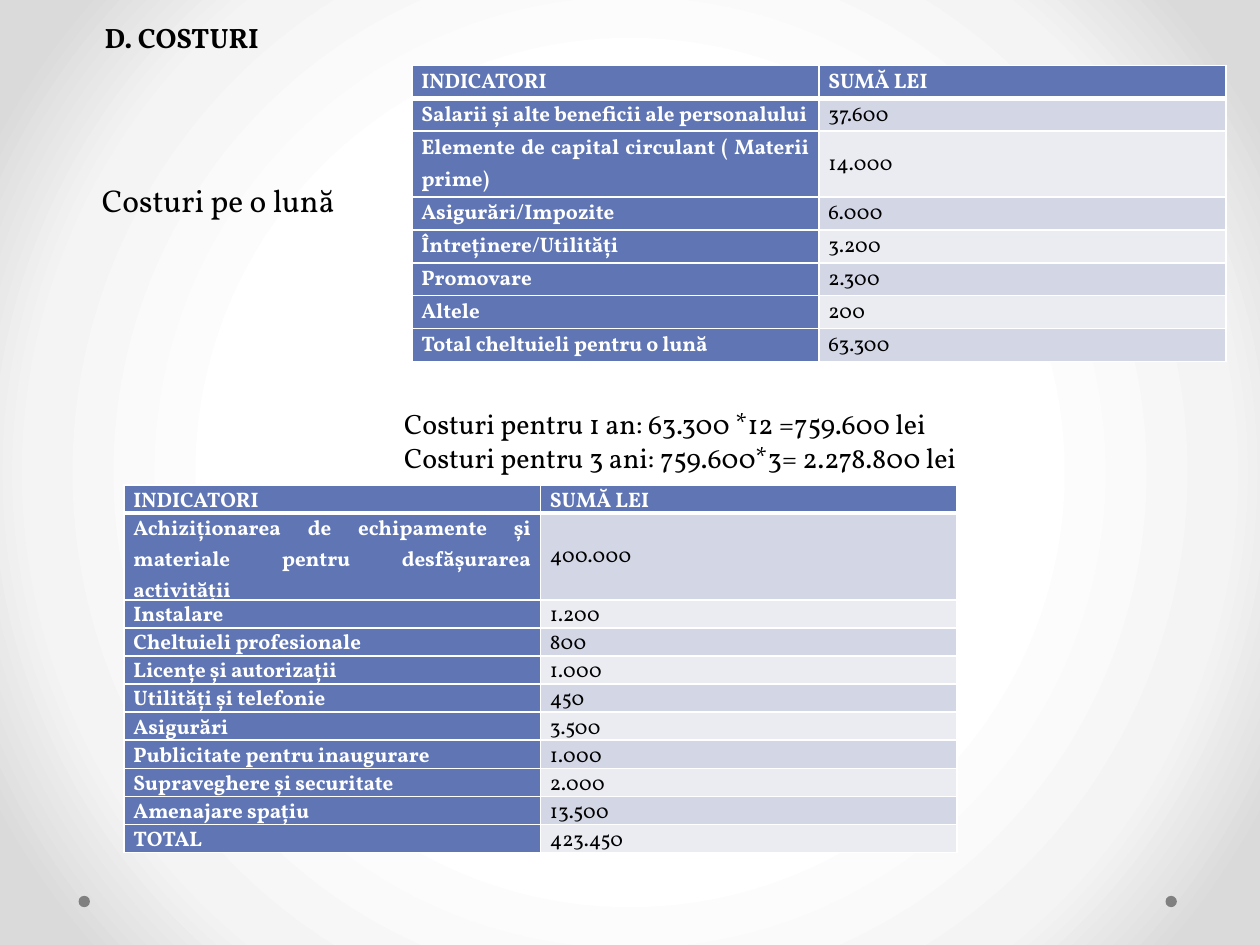
from pptx import Presentation
from pptx.dml.color import RGBColor
from pptx.enum.text import MSO_ANCHOR as ANCHOR, MSO_AUTO_SIZE as AUTO, PP_ALIGN as ALIGN
from pptx.enum.shapes import MSO_SHAPE as SHAPE
from pptx.oxml.ns import qn
from pptx.util import Pt
from lxml.etree import SubElement

FONT = "Vollkorn"
COLORS = {"text": "000000", "white": "FFFFFF", "head": "6076B4",
          "odd": "D2D6E5", "even": "EAECF2", "dot": "808080"}
BACKGROUND = [(50, "FFFFFF"), (76, "F4F4F4"), (92, "DADADA")]

TITLE = "D. COSTURI"
SUBTITLE = "Costuri pe o lună"
TOTALS = ["Costuri pentru 1 an: 63.300 *12 =759.600 lei",
          "Costuri pentru 3 ani: 759.600*3= 2.278.800 lei"]
HEADER = ("INDICATORI", "SUMĂ LEI")
MONTHLY = [
    HEADER,
    ("Salarii și alte beneficii ale personalului", "37.600"),
    ("Elemente de capital circulant ( Materii prime)", "14.000"),
    ("Asigurări/Impozite", "6.000"),
    ("Întreținere/Utilități", "3.200"),
    ("Promovare", "2.300"),
    ("Altele", "200"),
    ("Total cheltuieli pentru o lună", "63.300"),
]
STARTUP = [
    HEADER,
    ("Achiziționarea de echipamente și materiale pentru desfășurarea activității", "400.000"),
    ("Instalare", "1.200"),
    ("Cheltuieli profesionale", "800"),
    ("Licențe și autorizații", "1.000"),
    ("Utilități și telefonie", "450"),
    ("Asigurări", "3.500"),
    ("Publicitate pentru inaugurare", "1.000"),
    ("Supraveghere și securitate", "2.000"),
    ("Amenajare spațiu", "13.500"),
    ("TOTAL", "423.450"),
]


def rgb(name):
    return RGBColor.from_string(COLORS[name])


def style(p, size, color="text", bold=False):
    for r in p.runs:
        r.font.name = FONT
        r.font.size = Pt(size)
        r.font.bold = bold
        r.font.color.rgb = rgb(color)


def set_text(sp, lines, size, bold=False, wrap=False):
    tf = sp.text_frame
    tf.text = "\n".join(lines)
    tf.word_wrap = wrap
    tf.auto_size = AUTO.SHAPE_TO_FIT_TEXT
    tf.vertical_anchor = ANCHOR.TOP
    for p in tf.paragraphs:
        p.alignment = ALIGN.LEFT
        style(p, size, bold=bold)


def set_borders(cell, top, bottom):
    tcPr = cell._tc.get_or_add_tcPr()
    for side, width in (("L", 1), ("R", 1), ("T", top), ("B", bottom)):
        ln = SubElement(tcPr, qn(f"a:ln{side}"), w=str(Pt(width)))
        fill = SubElement(ln, qn("a:solidFill"))
        SubElement(fill, qn("a:srgbClr"), val=COLORS["white"])


def add_cost_table(s, rows, left, top, col_width, heights, header_anchor):
    table = s.shapes.add_table(len(rows), 2, Pt(left), Pt(top),
                               Pt(2 * col_width), Pt(sum(heights))).table
    for col in table.columns:
        col.width = Pt(col_width)
    for i, values in enumerate(rows):
        table.rows[i].height = Pt(heights[i])
        for j, value in enumerate(values):
            cell = table.cell(i, j)
            strong = i == 0 or j == 0
            cell.text_frame.text = value
            cell.margin_left = cell.margin_right = Pt(5.4)
            cell.margin_top = cell.margin_bottom = Pt(0)
            cell.vertical_anchor = ANCHOR.MIDDLE if i else header_anchor
            p = cell.text_frame.paragraphs[0]
            p.alignment = ALIGN.JUSTIFY
            p.line_spacing = 1.07
            p.space_after = Pt(8)
            style(p, 12, "white" if strong else "text", strong)
            set_borders(cell, 3 if i == 1 else 1, 3 if i == 0 else 1)
            cell.fill.solid()
            cell.fill.fore_color.rgb = rgb("head" if strong else "odd" if i % 2 else "even")


def set_background(s):
    fill = s.background.fill
    fill.gradient()
    grad = s.background._cSld.find(".//" + qn("a:gradFill"))
    for child in list(grad):
        grad.remove(child)
    stops = SubElement(grad, qn("a:gsLst"))
    for pos, color in BACKGROUND:
        stop = SubElement(stops, qn("a:gs"), pos=str(pos * 1000))
        SubElement(stop, qn("a:srgbClr"), val=color)
    shade = SubElement(grad, qn("a:path"))
    shade.set("path", "circle")
    SubElement(shade, qn("a:fillToRect"), {side: "50000" for side in "ltrb"})


def main():
    prs = Presentation()
    prs.slide_width, prs.slide_height = Pt(720), Pt(540)
    s = prs.slides.add_slide(prs.slide_layouts[5])
    set_background(s)

    for left in (44.9, 666):
        dot = s.shapes.add_shape(SHAPE.OVAL, Pt(left), Pt(511.9), Pt(6.5), Pt(6.5))
        dot.shadow.inherit = False
        dot.fill.solid()
        dot.fill.fore_color.rgb = rgb("dot")
        dot.line.fill.background()

    title = s.shapes.title
    title.left, title.top, title.width, title.height = Pt(52.6), Pt(7.9), Pt(112.3), Pt(26.6)
    set_text(title, [TITLE], 16, bold=True)

    sp = s.shapes.add_textbox(Pt(51.1), Pt(100), Pt(154), Pt(29))
    set_text(sp, [SUBTITLE], 18)

    add_cost_table(s, MONTHLY, 235.4, 37.4, 232.6,
                   [37.6 if i == 2 else 18.8 for i in range(len(MONTHLY))], ANCHOR.MIDDLE)

    sp = s.shapes.add_textbox(Pt(223.9), Pt(229), Pt(495), Pt(46))
    set_text(sp, TOTALS, 16, wrap=True)

    add_cost_table(s, STARTUP, 70.9, 277.2, 238,
                   [49.5 if i == 1 else 16.05 for i in range(len(STARTUP))], ANCHOR.TOP)

    prs.save("out.pptx")


if __name__ == "__main__":
    main()
